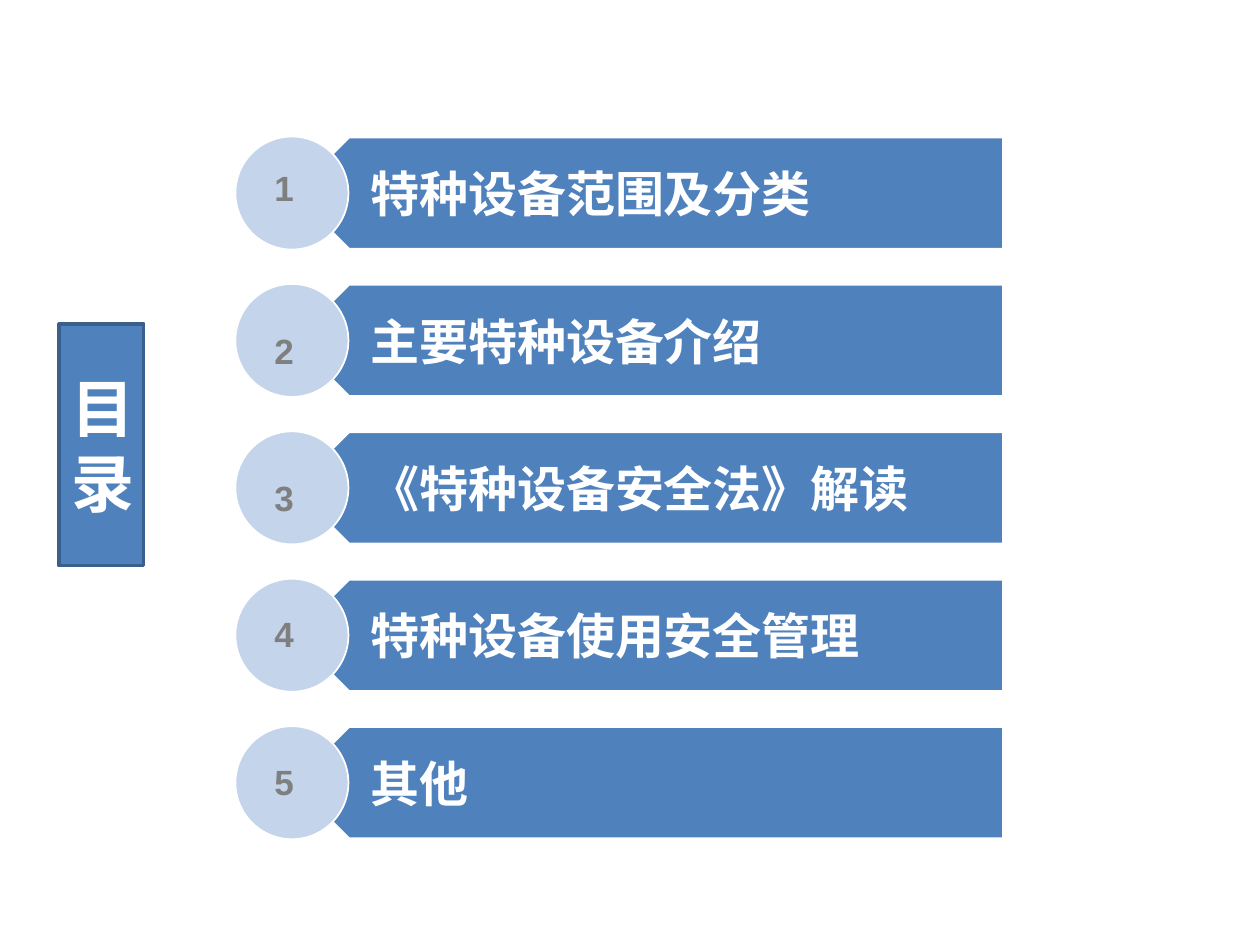
from dataclasses import dataclass

from lxml.etree import SubElement
from pptx import Presentation
from pptx.dml.color import RGBColor
from pptx.enum.shapes import MSO_SHAPE
from pptx.enum.text import MSO_ANCHOR, MSO_AUTO_SIZE, PP_ALIGN
from pptx.oxml.ns import qn
from pptx.util import Pt


@dataclass(frozen=True)
class Theme:
    blue: str = "4F81BD"
    pale: str = "C4D5EB"
    edge: str = "3A5F8C"
    white: str = "FFFFFF"
    gray: str = "7F7F7F"
    chinese: str = "Noto Sans CJK SC"
    latin: str = "Arial"
    title_size: int = 36
    item_size: int = 28
    number_size: int = 20


class AgendaSlide:
    def __init__(self, deck, theme):
        self.theme = theme
        self.page = deck.slides.add_slide(deck.slide_layouts[5])
        self.rows = self.page.shapes.add_group_shape().shapes

    def paint(self, shape, fill, edge, width):
        shape.fill.solid()
        shape.fill.fore_color.rgb = RGBColor.from_string(fill)
        shape.line.color.rgb = RGBColor.from_string(edge)
        shape.line.width = Pt(width)

    def add_text(self, box, text, size, color, font):
        box.text_frame.word_wrap = True
        para = box.text_frame.paragraphs[0]
        span = para.add_run()
        span.text = text
        span.font.size = Pt(size)
        span.font.bold = True
        span.font.color.rgb = RGBColor.from_string(color)
        span.font.name = font
        SubElement(span._r.get_or_add_rPr(), qn("a:ea")).set("typeface", font)
        return para

    def title(self, text, left, top, width, height):
        theme = self.theme
        box = self.page.shapes.title
        box.left, box.top, box.width, box.height = map(Pt, (left, top, width, height))
        self.paint(box, theme.blue, theme.edge, 2)
        para = self.add_text(box, text, theme.title_size, theme.white, theme.chinese)
        para.alignment = PP_ALIGN.CENTER
        box.text_frame.vertical_anchor = MSO_ANCHOR.MIDDLE
        box.text_frame.auto_size = MSO_AUTO_SIZE.NONE

    def shape(self, kind, left, top, width, height, fill, line_width):
        shape = self.rows.add_shape(kind, *map(Pt, (left, top, width, height)))
        shape.shadow.inherit = False
        self.paint(shape, fill, self.theme.white, line_width)
        return shape

    def bar(self, left, top, width, height):
        shape = self.shape(MSO_SHAPE.PENTAGON, left, top, width, height, self.theme.blue, 2)
        shape.rotation = 180

    def circle(self, left, top, size):
        self.shape(MSO_SHAPE.OVAL, left, top, size, size, self.theme.pale, 1)

    def label(self, text, left, top, width, height):
        theme = self.theme
        box = self.rows.add_textbox(*map(Pt, (left, top, width, height)))
        frame = box.text_frame
        frame.margin_left, frame.margin_right = Pt(28.8), Pt(15.84)
        frame.margin_top = frame.margin_bottom = Pt(8.64)
        frame.vertical_anchor = MSO_ANCHOR.MIDDLE
        self.add_text(box, text, theme.item_size, theme.white, theme.chinese)

    def number(self, text, left, top, width, height):
        theme = self.theme
        box = self.page.shapes.add_textbox(*map(Pt, (left, top, width, height)))
        self.add_text(box, text, theme.number_size, theme.gray, theme.latin)
        box.text_frame.auto_size = MSO_AUTO_SIZE.SHAPE_TO_FIT_TEXT


def main():
    deck = Presentation()
    deck.slide_width, deck.slide_height = Pt(720), Pt(540)
    agenda = AgendaSlide(deck, Theme())
    agenda.title("目录", 33.84, 185.04, 48.24, 138.24)

    items = [
        ("特种设备范围及分类", 13.68),
        ("主要特种设备介绍", 22.32),
        ("《特种设备安全法》解读", 22.32),
        ("特种设备使用安全管理", 15.84),
        ("其他", 15.84),
    ]
    first_top, pitch, height = 78, 84.24, 64.6
    for index, (text, number_drop) in enumerate(items):
        top = first_top + index * pitch
        agenda.bar(167, top, 406.6, height)
        agenda.label(text, 182.88, top, 390.72, height)
        agenda.circle(134.5, top, height)
        agenda.number(str(index + 1), 149.76, top + number_drop, 25.92, 31.68)

    deck.save("out.pptx")


if __name__ == "__main__":
    main()
